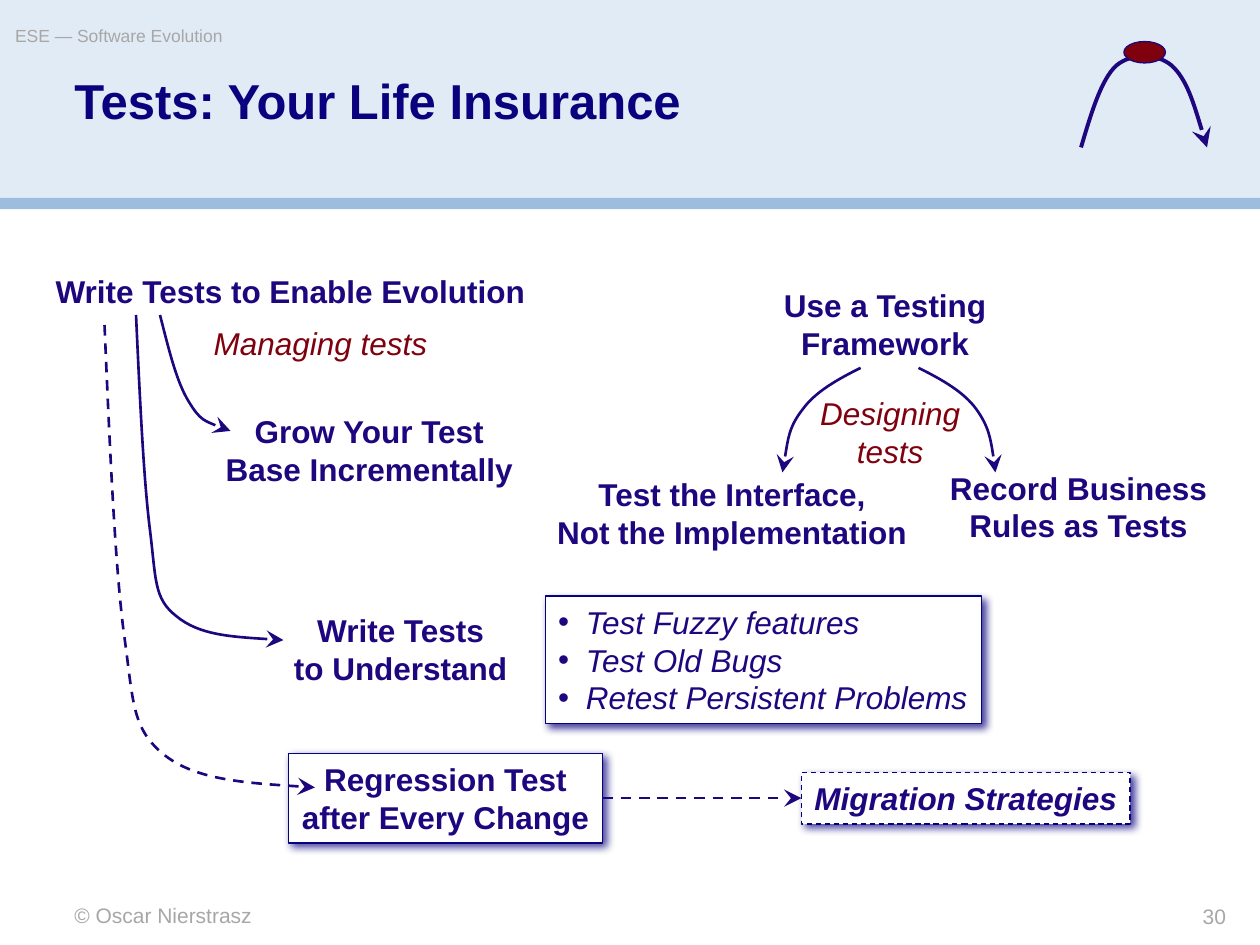
from lxml import etree
from pptx import Presentation
from pptx.dml.color import RGBColor
from pptx.enum import dml, shapes, text
from pptx.oxml.ns import qn
from pptx.util import Inches, Pt

COLORS = {"navy": "1E067F", "title": "0A017F", "border": "05027D", "red": "7F010D",
          "grey": "A7A7A7", "band": "E1EBF5", "stripe": "9CBDDE", "white": "FFFFFF"}
LEFT, CENTER, RIGHT = text.PP_ALIGN.LEFT, text.PP_ALIGN.CENTER, text.PP_ALIGN.RIGHT

TITLE = "Tests: Your Life Insurance"
BANDS = [((0, 0, 10, 1.58), "band"), ((0, 1.57, 10, 0.09), "stripe")]
MARGIN_TEXTS = [  # words, box, size, alignment
    ("© Oscar Nierstrasz", (0.59, 7.16, 4.17, 0.2), 12, LEFT),
    ("30", (8.25, 7.17, 1.48, 0.2), 12, RIGHT),
    ("ESE — Software Evolution", (0.12, 0.2, 5.9, 0.28), 10, LEFT),
]
PATTERNS = [  # paragraphs, box
    (["Write Tests to Enable Evolution"], (0.33, 2.11, 3.95, 0.4)),
    (["Grow Your Test\nBase Incrementally"], (1.69, 3.22, 2.48, 0.7)),
    (["Use a Testing", "Framework"], (6.11, 2.22, 1.83, 0.7)),
    (["Test the Interface,", "Not the Implementation"], (4.32, 3.72, 2.98, 0.7)),
    (["Record Business\nRules as Tests"], (7.44, 3.67, 2.24, 0.7)),
    (["Write Tests", "to Understand"], (2.23, 4.8, 1.9, 0.7)),
]
GROUP_LABELS = [
    (["Managing tests"], (1.59, 2.52, 1.9, 0.4), RIGHT),
    (["Designing", "tests"], (6.41, 3.08, 1.31, 0.7), CENTER),
]
BULLETS = ["Test Fuzzy features", "Test Old Bugs", "Retest Persistent Problems"]
BULLET_BOX = (4.33, 4.73, 3.46, 1.01)
REGRESSION = (["Regression Test\nafter Every Change"], (2.29, 5.98, 2.49, 0.71))
MIGRATION = (["Migration Strategies"], (6.36, 6.13, 2.61, 0.41))
CURVES = [  # start and Bézier points, line width, dashed
    ([(1.27, 2.5), (1.34, 2.77), (1.4, 3.03), (1.5, 3.19),
      (1.59, 3.34), (1.71, 3.38), (1.83, 3.42)], 1.5, False),
    ([(6.83, 2.92), (6.65, 3.01), (6.47, 3.11), (6.37, 3.25),
      (6.26, 3.39), (6.24, 3.57), (6.21, 3.75)], 1.5, False),
    ([(7.29, 2.92), (7.47, 3.01), (7.65, 3.11), (7.75, 3.25),
      (7.85, 3.39), (7.88, 3.57), (7.9, 3.75)], 1.5, False),
    ([(1.08, 2.5), (1.11, 3.15), (1.14, 3.8), (1.19, 4.2), (1.24, 4.6),
      (1.22, 4.75), (1.4, 4.89), (1.58, 5.04), (1.91, 5.06), (2.25, 5.08)], 1.5, False),
    ([(0.83, 2.58), (0.87, 3.51), (0.91, 4.43), (0.98, 5), (1.06, 5.56),
      (1.04, 5.77), (1.29, 5.98), (1.54, 6.19), (2.02, 6.22), (2.5, 6.25)], 1.5, True),
    ([(8.58, 1.17), (8.66, 0.9), (8.74, 0.63), (8.86, 0.52), (8.98, 0.42),
      (9.18, 0.42), (9.3, 0.52), (9.42, 0.63), (9.5, 0.9), (9.58, 1.17)], 2.25, False),
]
CURVE_TOP_OVAL = (8.92, 0.33, 0.33, 0.17)


def rgb(name):
    return RGBColor.from_string(COLORS[name])


def inches(values):
    return [Inches(value) for value in values]


def place(shape, box):
    shape.left, shape.top, shape.width, shape.height = inches(box)


def set_line(shape, color, width, dashed=False):
    shape.line.color.rgb = rgb(color)
    shape.line.width = Pt(width)
    if dashed:
        shape.line.dash_style = dml.MSO_LINE.DASH


def add_arrowhead(shape):
    line = shape._element.spPr.find(qn("a:ln"))
    etree.SubElement(line, qn("a:tailEnd"), type="stealth", w="lg", len="lg")


def write(shape, paragraphs, size=18, color="navy", align=CENTER, bold=False,
          italic=False, anchor=text.MSO_ANCHOR.MIDDLE, wrap=False, inset=True):
    frame = shape.text_frame
    frame.auto_size = text.MSO_AUTO_SIZE.NONE
    frame.word_wrap = wrap
    frame.vertical_anchor = anchor
    frame.margin_left = frame.margin_right = Inches(0.1 if inset else 0)
    frame.margin_top = frame.margin_bottom = Inches(0.05 if inset else 0)
    for index, words in enumerate(paragraphs):
        paragraph = frame.add_paragraph() if index else frame.paragraphs[0]
        paragraph.text = words
        paragraph.alignment = align
        paragraph.space_before = Pt(0)
        font = paragraph.font
        font.name, font.size, font.bold, font.italic = "Arial", Pt(size), bold, italic
        font.color.rgb = rgb(color)


def add_filled(slide, kind, box, fill):
    shape = slide.shapes.add_shape(kind, *inches(box))
    shape.shadow.inherit = False
    shape.fill.solid()
    shape.fill.fore_color.rgb = rgb(fill)
    shape.line.fill.background()
    return shape


def style_card(shape, dashed=False):
    """White box with a thin border and a soft shadow to the lower right."""
    shape.fill.solid()
    shape.fill.fore_color.rgb = rgb("white")
    set_line(shape, "border", 0.75, dashed)
    shape.shadow.inherit = False
    effects = shape._element.spPr.find(qn("a:effectLst"))
    shadow = etree.SubElement(effects, qn("a:outerShdw"), blurRad=str(Pt(5)),
                              dist=str(Pt(3)), dir="2700000", algn="ctr", rotWithShape="0")
    color = etree.SubElement(shadow, qn("a:srgbClr"), val=COLORS["title"])
    etree.SubElement(color, qn("a:alpha"), val="75000")


def add_card(slide, paragraphs, box, dashed=False, italic=False):
    card = add_filled(slide, shapes.MSO_SHAPE.RECTANGLE, box, "white")
    style_card(card, dashed)
    write(card, paragraphs, bold=True, italic=italic)
    return card


def add_curve(slide, points, width, dashed):
    """Draw a polyline, then turn each three of its segments into one Bézier curve."""
    start, *others = [inches(point) for point in points]
    builder = slide.shapes.build_freeform(*start)
    builder.add_line_segments(others, close=False)
    curve = builder.convert_to_shape()
    segments = list(curve._element.iter(qn("a:lnTo")))
    for first in range(0, len(segments), 3):
        bezier = etree.Element(qn("a:cubicBezTo"))
        segments[first].addprevious(bezier)
        for segment in segments[first:first + 3]:
            bezier.append(segment[0])
            segment.getparent().remove(segment)
    curve.fill.background()
    curve.shadow.inherit = False
    set_line(curve, "navy", width, dashed)
    add_arrowhead(curve)


def main():
    presentation = Presentation()
    presentation.slide_width, presentation.slide_height = Inches(10), Inches(7.5)
    slide = presentation.slides.add_slide(presentation.slide_layouts[1])
    title, bullets = slide.shapes.title, slide.placeholders[1]

    for box, color in BANDS:
        band = add_filled(slide, shapes.MSO_SHAPE.RECTANGLE, box, color)
        title._element.addprevious(band._element)

    place(title, (0.59, 0.61, 8.83, 0.89))
    write(title, [TITLE], 28, "title", LEFT, bold=True,
          anchor=text.MSO_ANCHOR.TOP, wrap=True, inset=False)
    title.text_frame.paragraphs[0].line_spacing = 0.9

    place(bullets, BULLET_BOX)
    style_card(bullets)
    write(bullets, BULLETS, align=LEFT, italic=True)
    for paragraph in bullets.text_frame.paragraphs:
        properties = paragraph._p.get_or_add_pPr()
        properties.set("marL", str(Inches(0.22)))
        properties.set("indent", str(Inches(-0.22)))
        bullet = etree.Element(qn("a:buChar"), char="•")
        properties.find(qn("a:defRPr")).addprevious(bullet)

    for words, box, size, align in MARGIN_TEXTS:
        write(slide.shapes.add_textbox(*inches(box)), [words], size, "grey", align,
              anchor=text.MSO_ANCHOR.TOP, wrap=True, inset=False)
    for paragraphs, box in PATTERNS:
        write(slide.shapes.add_textbox(*inches(box)), paragraphs, bold=True)
    for paragraphs, box, align in GROUP_LABELS:
        write(slide.shapes.add_textbox(*inches(box)), paragraphs, color="red",
              align=align, italic=True)

    regression = add_card(slide, *REGRESSION)
    migration = add_card(slide, *MIGRATION, dashed=True, italic=True)
    arrow = slide.shapes.add_connector(shapes.MSO_CONNECTOR.STRAIGHT, 0, 0, 0, 0)
    arrow.begin_connect(regression, 3)
    arrow.end_connect(migration, 1)
    set_line(arrow, "navy", 1.5, dashed=True)
    add_arrowhead(arrow)
    etree.SubElement(arrow._element.spPr, qn("a:effectLst"))

    for points, width, dashed in CURVES:
        add_curve(slide, points, width, dashed)
    oval = add_filled(slide, shapes.MSO_SHAPE.OVAL, CURVE_TOP_OVAL, "red")
    set_line(oval, "navy", 0.75)

    presentation.save("out.pptx")


if __name__ == "__main__":
    main()
